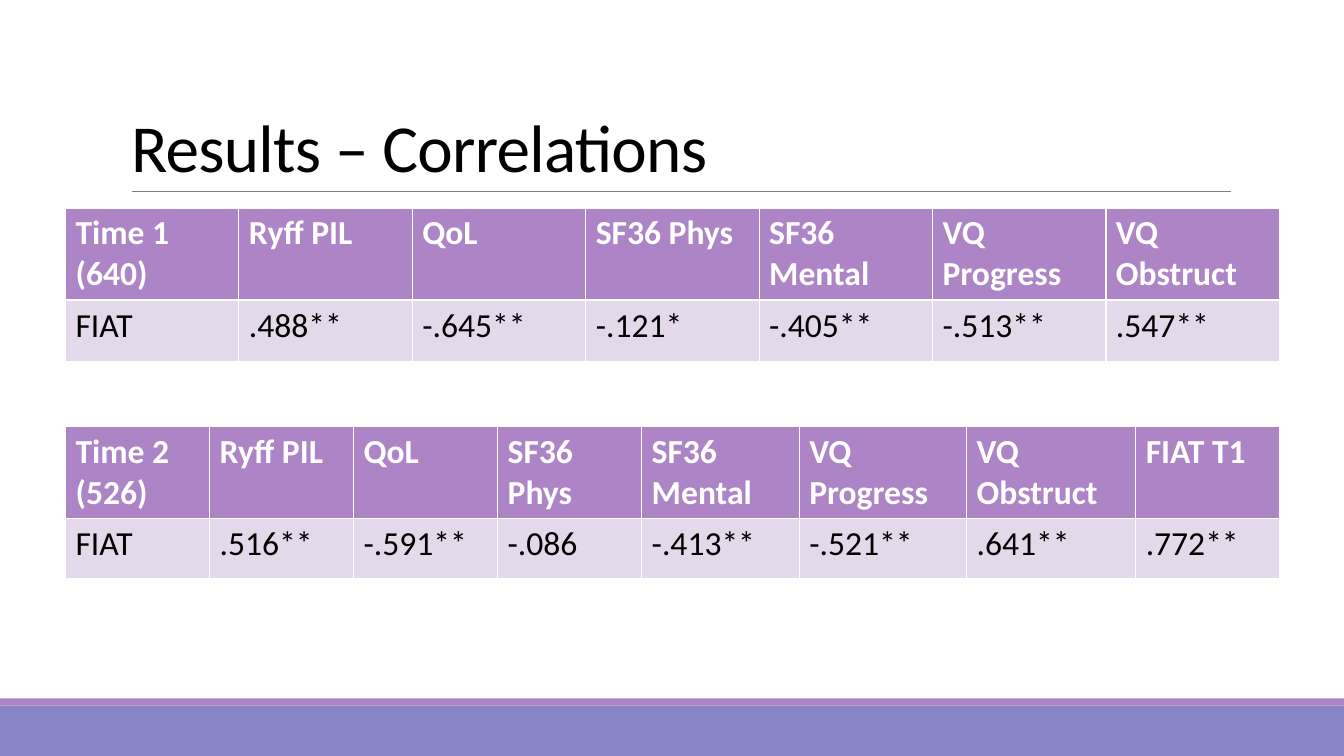
import pptx
import pptx.util
import pptx.dml.color
import pptx.enum.shapes
import pptx.enum.text

Cm = pptx.util.Cm
Pt = pptx.util.Pt


def color(value):
    return pptx.dml.color.RGBColor.from_string(value)


def write(tf, text, size=24, fill="000000", bold=False, spacing=0, line=1.0):
    p = tf.paragraphs[0]
    p.alignment = pptx.enum.text.PP_ALIGN.LEFT
    p.line_spacing = line
    r = p.add_run()
    r.text = text
    r.font.name = "Calibri"
    r.font.size = Pt(size)
    r.font.bold = bold
    r.font.color.rgb = color(fill)
    if spacing:
        r._r.get_or_add_rPr().set("spc", str(int(spacing * 100)))


prs = pptx.Presentation()
prs.slide_width = Cm(33.87)
prs.slide_height = Cm(19.05)
s = prs.slides.add_slide(prs.slide_layouts[5])

for top, height, fill in [(17.78, 1.27, "8784C7"), (17.6, 0.18, "AD84C6")]:
    sp = s.shapes.add_shape(
        pptx.enum.shapes.MSO_SHAPE.RECTANGLE, 0, Cm(top), prs.slide_width, Cm(height)
    )
    sp.shadow.inherit = False
    sp.fill.solid()
    sp.fill.fore_color.rgb = color(fill)
    sp.line.fill.background()

rule = s.shapes.add_connector(
    pptx.enum.shapes.MSO_CONNECTOR.STRAIGHT, Cm(3.33), Cm(4.83), Cm(31.01), Cm(4.83)
)
rule.line.color.rgb = color("808080")
rule.line.width = Pt(0.5)
rule._element.spPr.append(pptx.oxml.xmlchemy.OxmlElement("a:effectLst"))

title = s.shapes.title
title.left, title.top, title.width, title.height = Cm(3.05), Cm(0.79), Cm(27.94), Cm(4.04)
tf = title.text_frame
tf.word_wrap = True
tf.auto_size = pptx.enum.text.MSO_AUTO_SIZE.NONE
tf.vertical_anchor = pptx.enum.text.MSO_ANCHOR.BOTTOM
write(tf, "Results – Correlations", size=48, spacing=-0.5, line=0.85)

scales = ["Ryff PIL", "QoL", "SF36 Phys", "SF36 Mental", "VQ Progress", "VQ Obstruct"]
tables = [
    (
        5.24,
        [4.37] * 7,
        [2.21, 1.54],
        ["Time 1 (640)"] + scales,
        ["FIAT", ".488**", "-.645**", "-.121*", "-.405**", "-.513**", ".547**"],
    ),
    (
        10.75,
        [3.63] * 4 + [3.97, 4.22, 4.26, 3.63],
        [2.21, 1.5],
        ["Time 2 (526)"] + scales + ["FIAT T1"],
        ["FIAT", ".516**", "-.591**", "-.086", "-.413**", "-.521**", ".641**", ".772**"],
    ),
]

for top, widths, heights, header, values in tables:
    table = s.shapes.add_table(
        2, len(widths), Cm(1.65), Cm(top), Cm(sum(widths)), Cm(sum(heights))
    ).table
    for column, width in zip(table.columns, widths):
        column.width = Cm(width)
    for row, height in zip(table.rows, heights):
        row.height = Cm(height)
    styles = [(header, "AD84C6", "FFFFFF", True), (values, "E3D9EA", "000000", False)]
    for row, (texts, fill, ink, bold) in zip(table.rows, styles):
        for cell, text in zip(row.cells, texts):
            cell.fill.solid()
            cell.fill.fore_color.rgb = color(fill)
            write(cell.text_frame, text, fill=ink, bold=bold)

prs.save("out.pptx")
